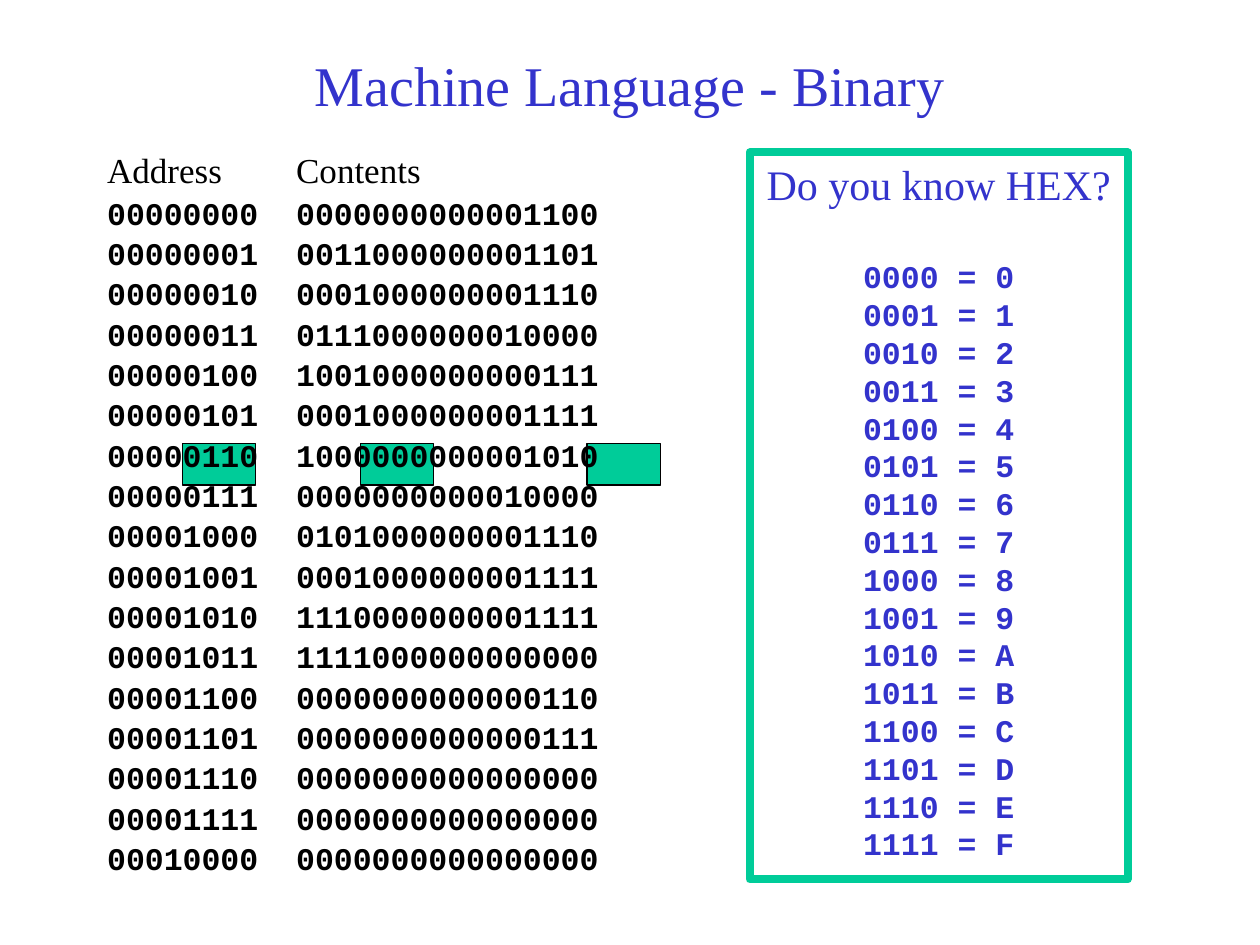
from lxml.etree import SubElement
from pptx import Presentation
from pptx.dml.color import RGBColor
from pptx.enum.shapes import MSO_SHAPE
from pptx.enum.text import MSO_ANCHOR, MSO_AUTO_SIZE, PP_ALIGN
from pptx.oxml.ns import qn
from pptx.util import Inches, Pt

TITLE = "Machine Language - Binary"
HEADER = "Address\t\tContents"
CONTENTS = [
    "0000000000001100", "0011000000001101", "0001000000001110", "0111000000010000",
    "1001000000000111", "0001000000001111", "1000000000001010", "0000000000010000",
    "0101000000001110", "0001000000001111", "1110000000001111", "1111000000000000",
    "0000000000000110", "0000000000000111", "0000000000000000", "0000000000000000",
    "0000000000000000",
]
QUESTION = "Do you know HEX?"
HEX_ROWS = [f"{n:04b} = {n:X}" for n in range(16)]
MARK_LEFTS = (2.86, 1.45, 4.66)
TAB_STOPS = (1.38, 2.38)

BLUE = RGBColor(0x33, 0x33, 0xCC)
GREEN = RGBColor(0x00, 0xCC, 0x99)
BLACK = RGBColor(0, 0, 0)
SERIF = {"name": "Times New Roman", "bold": False}
MONO = {"name": "Courier New", "bold": True, "size": Pt(18)}


def write(tf, rows, color, **para):
    """Fill a text frame with one paragraph per (text, font format) row."""
    for i, (text, fmt) in enumerate(rows):
        p = tf.paragraphs[0] if i == 0 else tf.add_paragraph()
        for key, value in para.items():
            setattr(p, key, value)
        r = p.add_run()
        r.text = text
        r.font.color.rgb = color
        for key, value in fmt.items():
            setattr(r.font, key, value)


def place(sp, *box):
    """Set left, top, width and height in inches."""
    for key, value in zip(("left", "top", "width", "height"), box):
        setattr(sp, key, Inches(value))


def add_box(s, box, line, width, fill=None):
    """Add an outlined rectangle without shadow."""
    sp = s.shapes.add_shape(MSO_SHAPE.RECTANGLE, *map(Inches, box))
    sp.shadow.inherit = False
    if fill is None:
        sp.fill.background()
    else:
        sp.fill.solid()
        sp.fill.fore_color.rgb = fill
    sp.line.color.rgb = line
    sp.line.width = Pt(width)
    return sp


def main():
    """Build the slide and save it."""
    prs = Presentation()
    prs.slide_width, prs.slide_height = Inches(10), Inches(7.5)
    s = prs.slides.add_slide(prs.slide_layouts[1])
    title, body = s.placeholders

    for left in MARK_LEFTS:
        add_box(s, (left, 3.52, 0.58, 0.33), BLACK, 0.75, GREEN)
    for ph in (title, body):
        s.shapes._spTree.append(ph._element)
        ph.text_frame.auto_size = MSO_AUTO_SIZE.NONE

    place(title, 0.75, 0.42, 8.5, 0.5)
    title.text_frame.vertical_anchor = MSO_ANCHOR.MIDDLE
    write(title.text_frame, [(TITLE, {**SERIF, "size": Pt(32)})], BLUE,
          alignment=PP_ALIGN.CENTER)

    place(body, 0.75, 1.17, 8.5, 6)
    memory = [(f"{n:08b}\t{word}", MONO) for n, word in enumerate(CONTENTS)]
    write(body.text_frame, [(HEADER, {**SERIF, "size": Pt(20)})] + memory, BLACK,
          line_spacing=0.9)
    for p in body.text_frame.paragraphs:
        pPr = p._p.get_or_add_pPr()
        pPr.set("marL", "0")
        pPr.set("indent", "0")
        SubElement(pPr, qn("a:buNone"))
        tabs = SubElement(pPr, qn("a:tabLst"))
        for stop in TAB_STOPS:
            SubElement(tabs, qn("a:tab"), pos=str(Inches(stop)), algn="l")

    tf = add_box(s, (5.95, 1.21, 3, 5.77), GREEN, 4.5).text_frame
    tf.word_wrap = False
    tf.vertical_anchor = MSO_ANCHOR.TOP
    write(tf, [(QUESTION, {**SERIF, "size": Pt(24)})] + [(row, MONO) for row in HEX_ROWS],
          BLUE, alignment=PP_ALIGN.CENTER)
    tf.paragraphs[0].space_after = Pt(27.6)

    prs.save("out.pptx")


if __name__ == "__main__":
    main()
